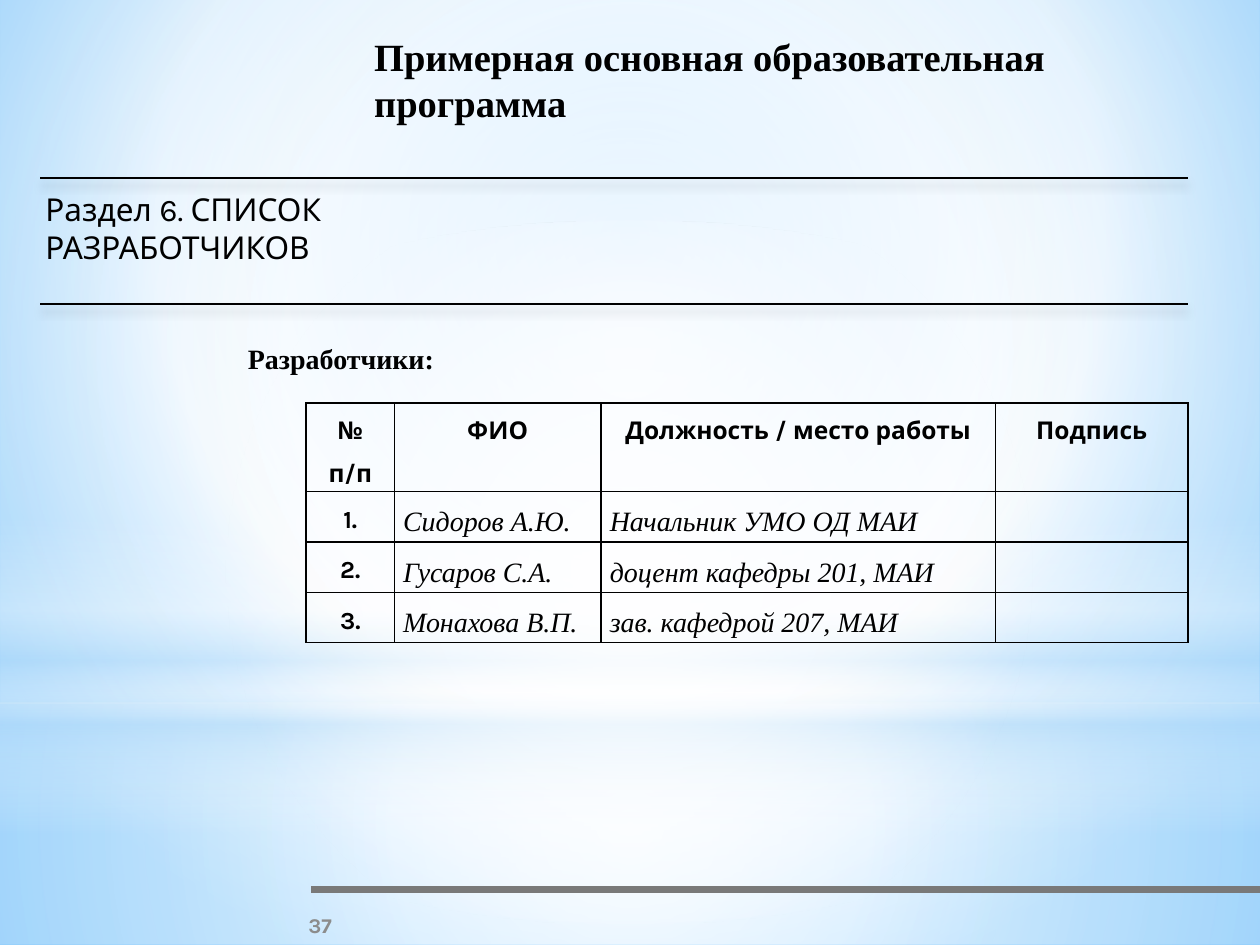
from lxml import etree
from pptx import Presentation
from pptx.dml.color import RGBColor
from pptx.enum.shapes import MSO_CONNECTOR, MSO_SHAPE
from pptx.enum.text import MSO_ANCHOR, MSO_AUTO_SIZE, PP_ALIGN
from pptx.oxml import parse_xml
from pptx.oxml.ns import nsdecls, qn
from pptx.util import Inches, Pt

RECT, OVAL = MSO_SHAPE.RECTANGLE, MSO_SHAPE.OVAL
STRAIGHT = MSO_CONNECTOR.STRAIGHT
TOP, MIDDLE = MSO_ANCHOR.TOP, MSO_ANCHOR.MIDDLE
LEFT, CENTER, JUSTIFY = PP_ALIGN.LEFT, PP_ALIGN.CENTER, PP_ALIGN.JUSTIFY
NO_FIT = MSO_AUTO_SIZE.NONE

COLORS = {
    "text": "000000", "number": "8C8C8C", "footer": "797979",
    "white": "FFFFFF", "pale": "B4DCFA", "sky": "9ED5FF", "blue": "5BB9FF",
}
SANS, SERIF = "Karla", "Times New Roman"
CENTRE = (50, 50, 50, 50)


def set_gradient(parent, stops, focus=None):
    """Swap the noFill in parent for a gradient: round if focus is given, else vertical."""
    gs = "".join(
        f'<a:gs pos="{pos * 1000}"><a:srgbClr val="{COLORS[color]}">'
        f'<a:alpha val="{alpha * 1000}"/></a:srgbClr></a:gs>'
        for pos, color, alpha in stops)
    if focus:
        l, t, r, b = (v * 1000 for v in focus)
        shade = (f'<a:path path="circle"><a:fillToRect l="{l}" t="{t}" '
                 f'r="{r}" b="{b}"/></a:path>')
    else:
        shade = '<a:lin ang="5400000" scaled="0"/>'
    grad = parse_xml(f'<a:gradFill {nsdecls("a")} rotWithShape="1">'
                     f'<a:gsLst>{gs}</a:gsLst>{shade}</a:gradFill>')
    parent.replace(parent.find(qn("a:noFill")), grad)


class Deck:
    def __init__(self):
        self.prs = Presentation()
        self.prs.slide_width, self.prs.slide_height = Inches(10), Inches(7.5)
        self.s = self.prs.slides.add_slide(self.prs.slide_layouts[5])

    def background(self, stops, focus):
        self.s.background.fill.background()
        set_gradient(self.s.element.find(".//" + qn("p:bgPr")), stops, focus)

    def glow(self, kind, top, height, stops, focus=None):
        """Full-width shape with a translucent gradient."""
        sp = self.s.shapes.add_shape(kind, 0, Inches(top), Inches(10), Inches(height))
        sp.shadow.inherit = False
        sp.line.fill.background()
        sp.fill.background()
        set_gradient(sp.element.spPr, stops, focus)

    def line(self, x1, x2, y, color, width, shadow=False):
        ln = self.s.shapes.add_connector(
            STRAIGHT, Inches(x1), Inches(y), Inches(x2), Inches(y))
        ln.line.color.rgb = RGBColor.from_string(COLORS[color])
        ln.line.width = Pt(width)
        effects = etree.SubElement(ln.element.spPr, qn("a:effectLst"))
        if shadow:
            effects.append(parse_xml(
                f'<a:outerShdw {nsdecls("a")} blurRad="{Pt(5)}" dist="{Pt(4)}" '
                f'dir="5400000" rotWithShape="0"><a:srgbClr val="{COLORS["text"]}">'
                '<a:alpha val="20000"/></a:srgbClr></a:outerShdw>'))

    def fill_text(self, tf, text, size, font, color="text", bold=False, italic=False,
                  align=LEFT, spacing=1.0):
        tf.text = text
        p = tf.paragraphs[0]
        p.alignment, p.line_spacing = align, spacing
        f = p.runs[0].font
        f.size, f.name, f.bold, f.italic = Pt(size), font, bold, italic
        f.color.rgb = RGBColor.from_string(COLORS[color])

    def title(self, box, text, size, font):
        sp = self.s.shapes.title
        sp.left, sp.top, sp.width, sp.height = map(Inches, box)
        tf = sp.text_frame
        tf.vertical_anchor, tf.auto_size, tf.word_wrap = TOP, NO_FIT, True
        self.fill_text(tf, text, size, font, bold=True)
        sp.element.getparent().append(sp.element)  # in front of the backdrop

    def text(self, box, text, size, font, anchor=TOP, wrap=True, insets=(0.1, 0.05),
             **style):
        tf = self.s.shapes.add_textbox(*map(Inches, box)).text_frame
        tf.word_wrap, tf.vertical_anchor = wrap, anchor
        tf.margin_left = tf.margin_right = Inches(insets[0])
        tf.margin_top = tf.margin_bottom = Inches(insets[1])
        self.fill_text(tf, text, size, font, **style)

    def cell_frame(self, cell):
        """Clear the fill, set the margins and draw a thin border."""
        cell.fill.background()
        cell.margin_left = cell.margin_right = Inches(0.07)
        cell.margin_top = cell.margin_bottom = 0
        tc_pr = cell._tc.get_or_add_tcPr()
        for i, side in enumerate("LRTB"):
            tc_pr.insert(i, parse_xml(
                f'<a:ln{side} {nsdecls("a")} w="{Pt(1)}"><a:solidFill>'
                f'<a:srgbClr val="{COLORS["text"]}"/></a:solidFill></a:ln{side}>'))

    def table(self, left, top, widths, heights, rows):
        table = self.s.shapes.add_table(
            len(rows), len(widths), Inches(left), Inches(top),
            Inches(sum(widths)), Inches(sum(heights))).table
        table.first_row = table.horz_banding = False
        for col, width in zip(table.columns, widths):
            col.width = Inches(width)
        for row, height in zip(table.rows, heights):
            row.height = Inches(height)
        for i, row in enumerate(rows):
            for j, value in enumerate(row):
                cell = table.cell(i, j)
                self.cell_frame(cell)
                if not value:
                    continue
                if i == 0 or j == 0:
                    self.fill_text(cell.text_frame, value, 14, SANS, bold=True,
                                   align=CENTER, spacing=1.5)
                else:
                    self.fill_text(cell.text_frame, value, 16, SERIF, italic=True,
                                   align=JUSTIFY, spacing=1.5)


def main():
    deck = Deck()
    deck.background([(0, "sky", 100), (60, "white", 100), (100, "blue", 100)],
                    (20, 10, 20, 60))
    deck.glow(RECT, 5.58, 1.92,
              [(0, "white", 91), (37, "white", 76), (100, "pale", 79)], CENTRE)
    deck.glow(RECT, 0, 5.58,
              [(0, "white", 89), (48, "white", 62), (100, "pale", 79)], CENTRE)
    deck.glow(RECT, 4.12, 2.5,
              [(0, "white", 0), (29, "white", 30), (45, "pale", 40),
               (55, "white", 26), (65, "pale", 60), (100, "white", 0)])
    deck.glow(OVAL, 1.75, 5.58, [(0, "white", 100), (56, "white", 0)], CENTRE)

    deck.line(2.47, 10.05, 7.06, "footer", 4)
    deck.text((1.54, 7.14, 2, 0.4), "37", 12, SANS, anchor=MIDDLE,
              color="number", bold=True, align=CENTER)
    deck.title((2.87, 0.21, 6.78, 0.84),
               "Примерная основная образовательная программа", 22, SERIF)

    for y in (1.41, 2.41):
        deck.line(0.32, 9.43, y, "text", 1.25, shadow=True)
    deck.text((0.32, 1.49, 3.89, 0.65), "Раздел 6. СПИСОК РАЗРАБОТЧИКОВ", 18, SANS,
              insets=(0.04, 0.02))

    deck.table(2.43, 3.2, (0.7, 1.64, 3.13, 1.53), (0.7, 0.4, 0.4, 0.4), [
        ("№ п/п", "ФИО", "Должность / место работы", "Подпись"),
        ("1.", "Сидоров А.Ю.", "Начальник УМО ОД МАИ", ""),
        ("2.", "Гусаров С.А.", "доцент кафедры 201, МАИ", ""),
        ("3.", "Монахова В.П.", "зав. кафедрой 207, МАИ", ""),
    ])
    deck.text((1.87, 2.66, 1.7, 0.37), "Разработчики:", 16, SERIF, anchor=MIDDLE,
              wrap=False, bold=True)
    deck.prs.save("out.pptx")


if __name__ == "__main__":
    main()
